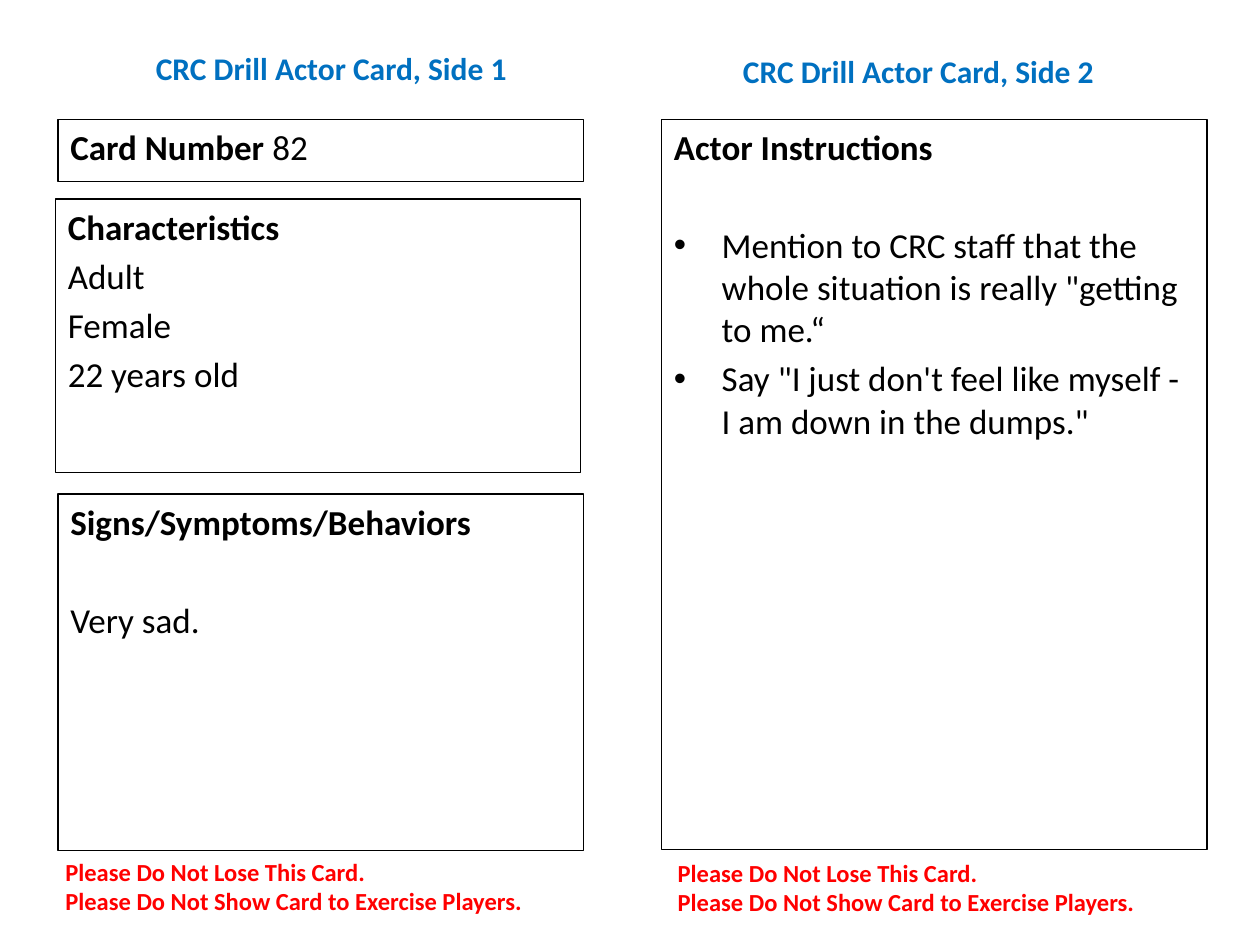
from lxml.etree import SubElement
from pptx import Presentation
from pptx.dml.color import RGBColor
from pptx.enum.shapes import MSO_SHAPE
from pptx.enum.text import MSO_ANCHOR, PP_ALIGN
from pptx.oxml.ns import qn
from pptx.util import Inches, Pt

COLORS = {"title": "0070C0", "text": "000000", "warning": "FF0000"}
SIZES = {"title": 18, "text": 20, "warning": 14}
FONT = "Calibri"
LINE_GAP, SECTION_GAP = 4, 32  # points before a line, before a set-off line
BULLET_INDENT = 0.38

# (left, top, width, height), text
TITLES = [
    ((0.42, 0.15, 4.42, 0.78), "CRC Drill Actor Card, Side 1"),
    ((5.08, 0.17, 4.42, 0.78), "CRC Drill Actor Card, Side 2"),
]
# (left, top, width, height), heading, text beside it, lines, set off, bulleted
BOXES = [
    ((0.46, 0.95, 4.17, 0.49), "Card Number ", "82", [], False, False),
    ((0.44, 1.58, 4.17, 2.17), "Characteristics", "",
     ["Adult", "Female", "22 years old"], False, False),
    ((0.46, 3.92, 4.17, 2.83), "Signs/Symptoms/Behaviors", "",
     ["Very sad."], True, False),
    ((5.25, 0.95, 4.33, 5.79), "Actor Instructions", "",
     ['Mention to CRC staff that the whole situation is really "getting to me.“',
      'Say "I just don\'t feel like myself - I am down in the dumps."'], True, True),
]
WARNING = ["Please Do Not Lose This Card.",
           "Please Do Not Show Card to Exercise Players."]
WARNING_PLACES = [(0.42, 6.75, 4.21, 0.57), (5.28, 6.76, 4.21, 0.57)]


def add_run(p, text, style, bold=True):
    r = p.add_run()
    r.text = text
    for name, value in {"name": FONT, "size": Pt(SIZES[style]), "bold": bold}.items():
        setattr(r.font, name, value)
    r.font.color.rgb = RGBColor.from_string(COLORS[style])


def add_bullet(p):
    pPr = p._p.get_or_add_pPr()
    pPr.set("marL", str(Inches(BULLET_INDENT)))
    pPr.set("indent", str(-Inches(BULLET_INDENT)))
    SubElement(pPr, qn("a:buFont"), typeface="Arial")
    SubElement(pPr, qn("a:buChar"), char="•")


def add_label(slide, place, lines, style, anchor, align):
    tf = slide.shapes.add_textbox(*map(Inches, place)).text_frame
    tf.word_wrap = True
    tf.vertical_anchor = anchor
    for i, line in enumerate(lines):
        p = tf.add_paragraph() if i else tf.paragraphs[0]
        p.alignment = align
        add_run(p, line, style)


def add_box(slide, place, heading, beside, lines, set_off, bulleted):
    sp = slide.shapes.add_shape(MSO_SHAPE.RECTANGLE, *map(Inches, place))
    sp.shadow.inherit = False
    sp.fill.background()
    sp.line.color.rgb = RGBColor.from_string(COLORS["text"])
    sp.line.width = Pt(0.75)
    tf = sp.text_frame
    tf.word_wrap = True
    tf.vertical_anchor = MSO_ANCHOR.TOP
    p = tf.paragraphs[0]
    p.alignment = PP_ALIGN.LEFT
    add_run(p, heading, "text")
    if beside:
        add_run(p, beside, "text", bold=False)
    for i, line in enumerate(lines):
        p = tf.add_paragraph()
        p.alignment = PP_ALIGN.LEFT
        p.space_before = Pt(SECTION_GAP if set_off and i == 0 else LINE_GAP)
        if bulleted:
            add_bullet(p)
        add_run(p, line, "text", bold=False)


def main():
    prs = Presentation()
    prs.slide_width, prs.slide_height = Inches(10), Inches(7.5)
    slide = prs.slides.add_slide(prs.slide_layouts[6])
    for place, title in TITLES:
        add_label(slide, place, [title], "title", MSO_ANCHOR.MIDDLE, PP_ALIGN.CENTER)
    for box in BOXES:
        add_box(slide, *box)
    for place in WARNING_PLACES:
        add_label(slide, place, WARNING, "warning", MSO_ANCHOR.TOP, PP_ALIGN.LEFT)
    prs.save("out.pptx")


if __name__ == "__main__":
    main()
